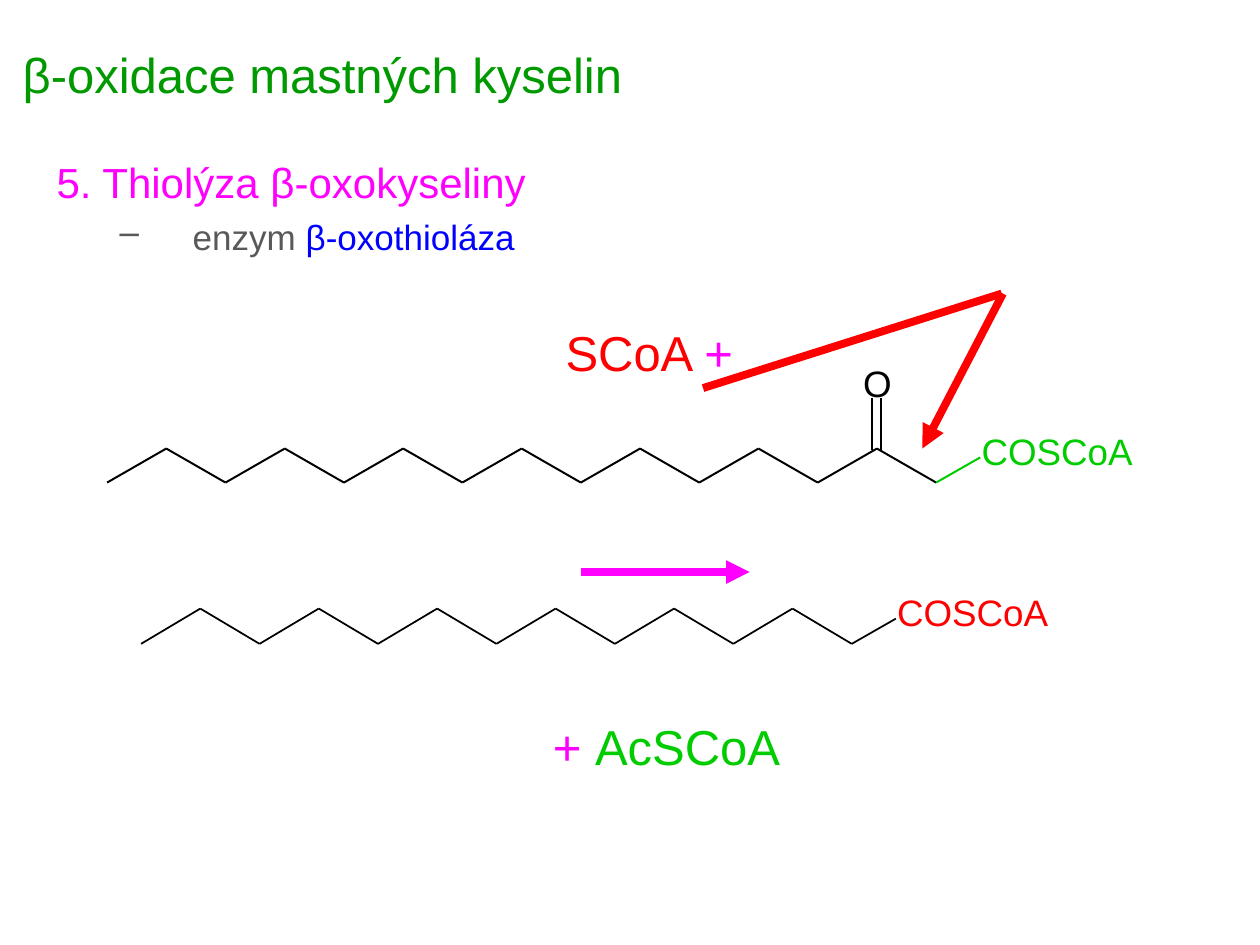
from lxml.etree import SubElement
from pptx import Presentation
from pptx.dml.color import RGBColor
from pptx.enum.shapes import MSO_CONNECTOR
from pptx.enum.text import MSO_ANCHOR, MSO_AUTO_SIZE, PP_ALIGN
from pptx.oxml.ns import qn
from pptx.util import Inches, Pt

COLORS = {
    "title": "009900", "magenta": "FF00FF", "grey": "595959", "blue": "0000FF",
    "red": "FF0000", "green": "00CC00", "black": "000000",
}


def write(shape, paragraphs, margin=None):
    """Fill a shape with paragraphs, each a size and a list of (text, color) runs."""
    tf = shape.text_frame
    if margin is not None:
        tf.margin_left = tf.margin_right = tf.margin_top = tf.margin_bottom = margin
    for i, (size, runs) in enumerate(paragraphs):
        p = tf.paragraphs[0] if i == 0 else tf.add_paragraph()
        p.alignment = PP_ALIGN.LEFT
        p.font.name, p.font.size = "Arial", Pt(size)
        for text, color in runs:
            r = p.add_run()
            r.text = text
            r.font.color.rgb = RGBColor.from_string(COLORS[color])
    return tf


def add_line(shapes, start, end, color, width, arrow=False):
    line = shapes.add_connector(MSO_CONNECTOR.STRAIGHT, *map(Inches, start + end))
    line.line.color.rgb = RGBColor.from_string(COLORS[color])
    line.line.width = Pt(width)
    if arrow:
        SubElement(line.line._get_or_add_ln(), qn("a:tailEnd"), type="triangle")
    SubElement(line._element.spPr, qn("a:effectLst"))


prs = Presentation()
prs.slide_width, prs.slide_height = Inches(10), Inches(7.5)
s = prs.slides.add_slide(prs.slide_layouts[5])

title = s.shapes.title
title.left, title.top = Inches(0.08), Inches(0.08)
title.width, title.height = Inches(8.07), Inches(1.02)
tf = write(title, [(28, [("β-oxidace mastných kyselin", "title")])])
tf.vertical_anchor = MSO_ANCHOR.MIDDLE

# Step and enzyme
body = s.shapes.add_textbox(Inches(0.35), Inches(1.19), Inches(9.65), Inches(5.51))
body.text_frame.word_wrap = True
tf = write(body, [
    (24, [("5. Thiolýza β-oxokyseliny", "magenta")]),
    (20, [("enzym ", "grey"), ("β-oxothioláza", "blue")]),
])
step, enzyme = tf.paragraphs
enzyme.level = 1
enzyme.space_before = Pt(5)
for p, left, indent in ((step, 0.67, -0.67), (enzyme, 1.08, -0.58)):
    pPr = p._p.get_or_add_pPr()
    pPr.set("marL", str(Inches(left)))
    pPr.set("indent", str(Inches(indent)))
bullet = enzyme._p.pPr.makeelement(qn("a:buChar"), {"char": "–"})
enzyme._p.pPr.find(qn("a:defRPr")).addprevious(bullet)

# Reagent and by-product
for x, y, w, runs in (
    (4.39, 2.51, 1.65, [("SCoA ", "red"), ("+", "magenta")]),
    (4.29, 5.64, 2.01, [("+ ", "magenta"), ("AcSCoA", "green")]),
):
    box = s.shapes.add_textbox(Inches(x), Inches(y), Inches(w), Inches(0.57))
    write(box, [(28, runs)]).auto_size = MSO_AUTO_SIZE.SHAPE_TO_FIT_TEXT

add_line(s.shapes, (4.61, 4.54), (5.95, 4.54), "magenta", 4.5, arrow=True)
add_line(s.shapes, (7.96, 2.33), (7.32, 3.56), "red", 4.5, arrow=True)

# Carbon chains: zigzags that end in a short bond and a COSCoA label
BOND = 0.47
for left, low, high, bonds, color, bond_color, width in (
    (0.85, 3.83, 3.56, 14, "green", "green", 1.13),
    (1.12, 5.11, 4.83, 12, "red", "black", 1),
):
    chain = s.shapes.add_group_shape().shapes
    points = [(left + i * BOND, high if i % 2 else low) for i in range(bonds + 1)]
    for start, end in zip(points, points[1:]):
        add_line(chain, start, end, "black", width)
    x, y = points[-1]
    add_line(chain, (x, y), (x + 0.35, y - 0.2), bond_color, width)
    labels = [("COSCoA", color, x + 0.36, low - 0.43, 1.2)]
    if bonds == 14:  # the longer chain carries the oxo group
        for oxo_x in (6.92, 6.99):
            add_line(chain, (oxo_x, 3.57), (oxo_x, 3.16), "black", 1.25)
        labels.append(("O", "black", 6.85, 2.86, 0.23))
    for text, text_color, x, y, w in labels:
        box = chain.add_textbox(Inches(x), Inches(y), Inches(w), Inches(0.35))
        tf = write(box, [(21, [(text, text_color)])], margin=0)
        tf.auto_size = MSO_AUTO_SIZE.SHAPE_TO_FIT_TEXT

add_line(s.shapes, (5.58, 3.08), (7.95, 2.33), "red", 4.5)

prs.save("out.pptx")
